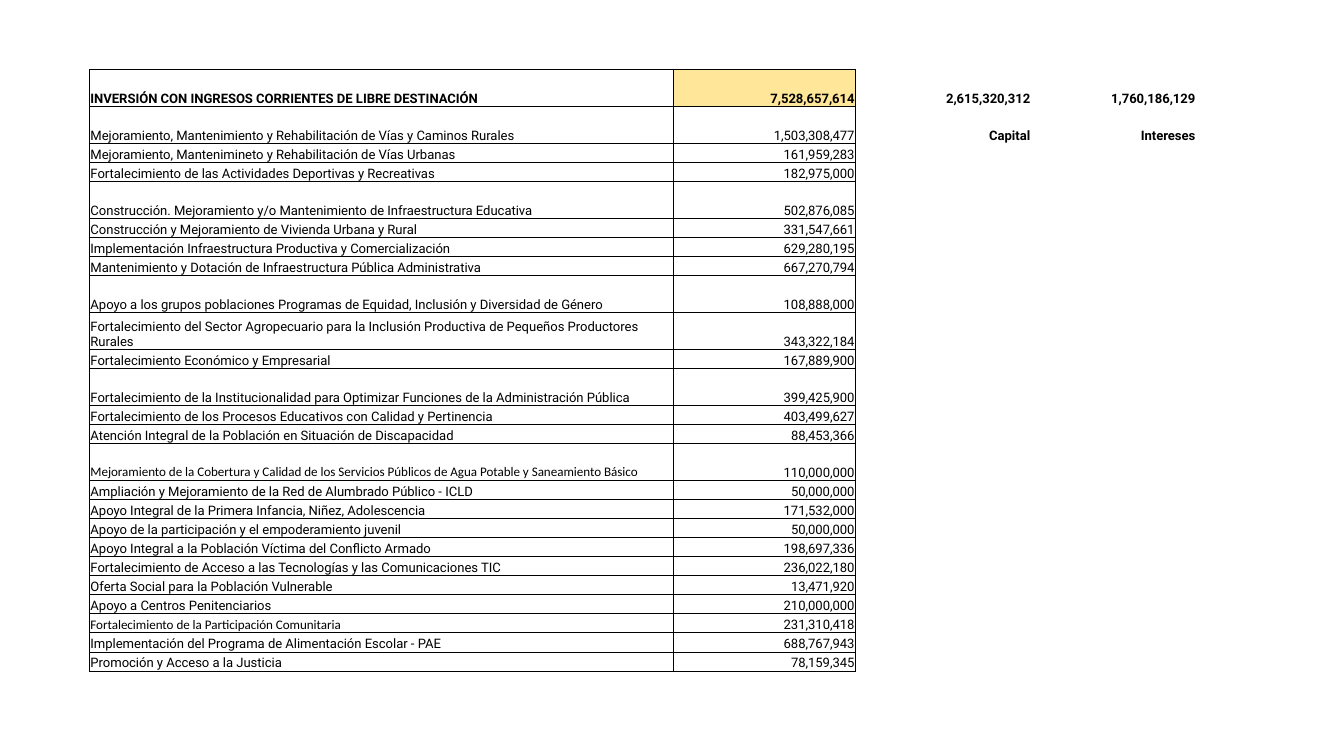
from lxml import etree
from pptx import Presentation
from pptx import util as u
from pptx.dml.color import RGBColor
from pptx.enum import text
from pptx.oxml.ns import qn

COLORS = {"ink": "000000", "total": "FFE699", "blank": "FFFFFF"}
NO_STYLE = "{2D5ABB26-0587-4C30-8999-92F81FD0307C}"
COL_WIDTHS = [11.04, 3.44, 3.32, 3.12]
TALL, SHORT = 0.7, 0.36
TALL_ROWS = {0, 1, 4, 8, 9, 11, 14}
CALIBRI_ROWS = {14, 22}
BOLD_CELLS = {(0, 0), (0, 1), (0, 2), (0, 3), (1, 2), (1, 3)}

ROWS = [
    ("INVERSIÓN CON INGRESOS CORRIENTES DE LIBRE DESTINACIÓN", "7,528,657,614", "2,615,320,312", "1,760,186,129"),
    ("Mejoramiento, Mantenimiento y Rehabilitación de Vías y Caminos Rurales", "1,503,308,477", "Capital", "Intereses"),
    ("Mejoramiento, Mantenimineto y Rehabilitación de Vías Urbanas", "161,959,283"),
    ("Fortalecimiento de las Actividades Deportivas y Recreativas", "182,975,000"),
    ("Construcción. Mejoramiento y/o Mantenimiento de Infraestructura Educativa", "502,876,085"),
    ("Construcción y Mejoramiento de Vivienda Urbana y Rural", "331,547,661"),
    ("Implementación Infraestructura Productiva y Comercialización", "629,280,195"),
    ("Mantenimiento y Dotación de Infraestructura Pública Administrativa", "667,270,794"),
    ("Apoyo a los grupos poblaciones Programas de Equidad, Inclusión y Diversidad de Género", "108,888,000"),
    ("Fortalecimiento del Sector Agropecuario para la Inclusión Productiva de Pequeños Productores Rurales",
     "343,322,184"),
    ("Fortalecimiento Económico y Empresarial", "167,889,900"),
    ("Fortalecimiento de la Institucionalidad para Optimizar Funciones de la Administración Pública", "399,425,900"),
    ("Fortalecimiento de los Procesos Educativos con Calidad y Pertinencia", "403,499,627"),
    ("Atención Integral de la Población en Situación de Discapacidad", "88,453,366"),
    ("Mejoramiento de la Cobertura y Calidad de los Servicios Públicos de Agua Potable y Saneamiento Básico",
     "110,000,000"),
    ("Ampliación y Mejoramiento de la Red de Alumbrado Público - ICLD", "50,000,000"),
    ("Apoyo Integral de la Primera Infancia, Niñez, Adolescencia", "171,532,000"),
    ("Apoyo de la participación y el empoderamiento juvenil", "50,000,000"),
    ("Apoyo Integral a la Población Víctima del Conflicto Armado", "198,697,336"),
    ("Fortalecimiento de Acceso a las Tecnologías y las Comunicaciones TIC", "236,022,180"),
    ("Oferta Social para la Población Vulnerable", "13,471,920"),
    ("Apoyo a Centros Penitenciarios", "210,000,000"),
    ("Fortalecimiento de la Participación Comunitaria", "231,310,418"),
    ("Implementación del Programa de Alimentación Escolar - PAE", "688,767,943"),
    ("Promoción y Acceso a la Justicia", "78,159,345"),
]


def write(tf, content, size=7, font="Roboto", bold=False, align=text.PP_ALIGN.LEFT, color="ink"):
    p = tf.paragraphs[0]
    p.alignment = align
    if not content:
        etree.SubElement(p._p, qn("a:endParaRPr"), sz=str(size * 100))
        return
    r = p.add_run()
    r.text = content
    r.font.size = u.Pt(size)
    r.font.name = font
    r.font.bold = bold
    r.font.color.rgb = RGBColor.from_string(COLORS[color])


class Deck:
    inset = u.Cm(0.02)
    line = u.Pt(0.5)

    def __init__(self, slide):
        self.s = slide

    def borders(self, cell, sides):
        pr = cell._tc.get_or_add_tcPr()
        for side in "LRTB":
            ln = etree.SubElement(pr, qn(f"a:ln{side}"), w=str(self.line))
            if side in sides:
                fill = etree.SubElement(ln, qn("a:solidFill"))
                etree.SubElement(fill, qn("a:srgbClr"), val=COLORS["ink"])
            else:
                etree.SubElement(ln, qn("a:noFill"))

    def cell(self, cell, content, sides="", fill=None, **fmt):
        cell.margin_left = cell.margin_right = cell.margin_top = self.inset
        cell.margin_bottom = 0
        cell.vertical_anchor = text.MSO_ANCHOR.BOTTOM
        self.borders(cell, sides)
        if fill:
            cell.fill.solid()
            cell.fill.fore_color.rgb = RGBColor.from_string(COLORS[fill])
        else:
            cell.fill.background()
        write(cell.text_frame, content, **fmt)

    def table(self, left, top, widths, heights):
        frame = self.s.shapes.add_table(len(heights), len(widths), u.Cm(left), u.Cm(top),
                                        u.Cm(sum(widths)), u.Cm(sum(heights)))
        tbl = frame.table
        tbl.first_row = tbl.horz_banding = False
        tbl._tbl.tblPr.find(qn("a:tableStyleId")).text = NO_STYLE
        for col, width in zip(tbl.columns, widths):
            col.width = u.Cm(width)
        for row, height in zip(tbl.rows, heights):
            row.height = u.Cm(height)
        return tbl


def cell_fill(row, col):
    if (row, col) == (0, 1):
        return "total"
    if (row, col) == (1, 2) or (col == 3 and row > 1):
        return "blank"
    return None


def main():
    prs = Presentation()
    prs.slide_width, prs.slide_height = u.Cm(25.4), u.Cm(14.29)
    deck = Deck(prs.slides.add_slide(prs.slide_layouts[6]))

    heights = [TALL if i in TALL_ROWS else SHORT for i in range(len(ROWS))]
    tbl = deck.table(1.69, 1.31, COL_WIDTHS, heights)
    sides = ["LRTB", "LRTB", "L", ""]
    for i, values in enumerate(ROWS):
        for j in range(len(COL_WIDTHS)):
            deck.cell(
                tbl.cell(i, j),
                values[j] if j < len(values) else "",
                sides=sides[j],
                fill=cell_fill(i, j),
                font="Calibri" if j == 0 and i in CALIBRI_ROWS else "Roboto",
                bold=(i, j) in BOLD_CELLS,
                align=text.PP_ALIGN.RIGHT if j else text.PP_ALIGN.LEFT,
            )

    prs.save("out.pptx")


if __name__ == "__main__":
    main()
